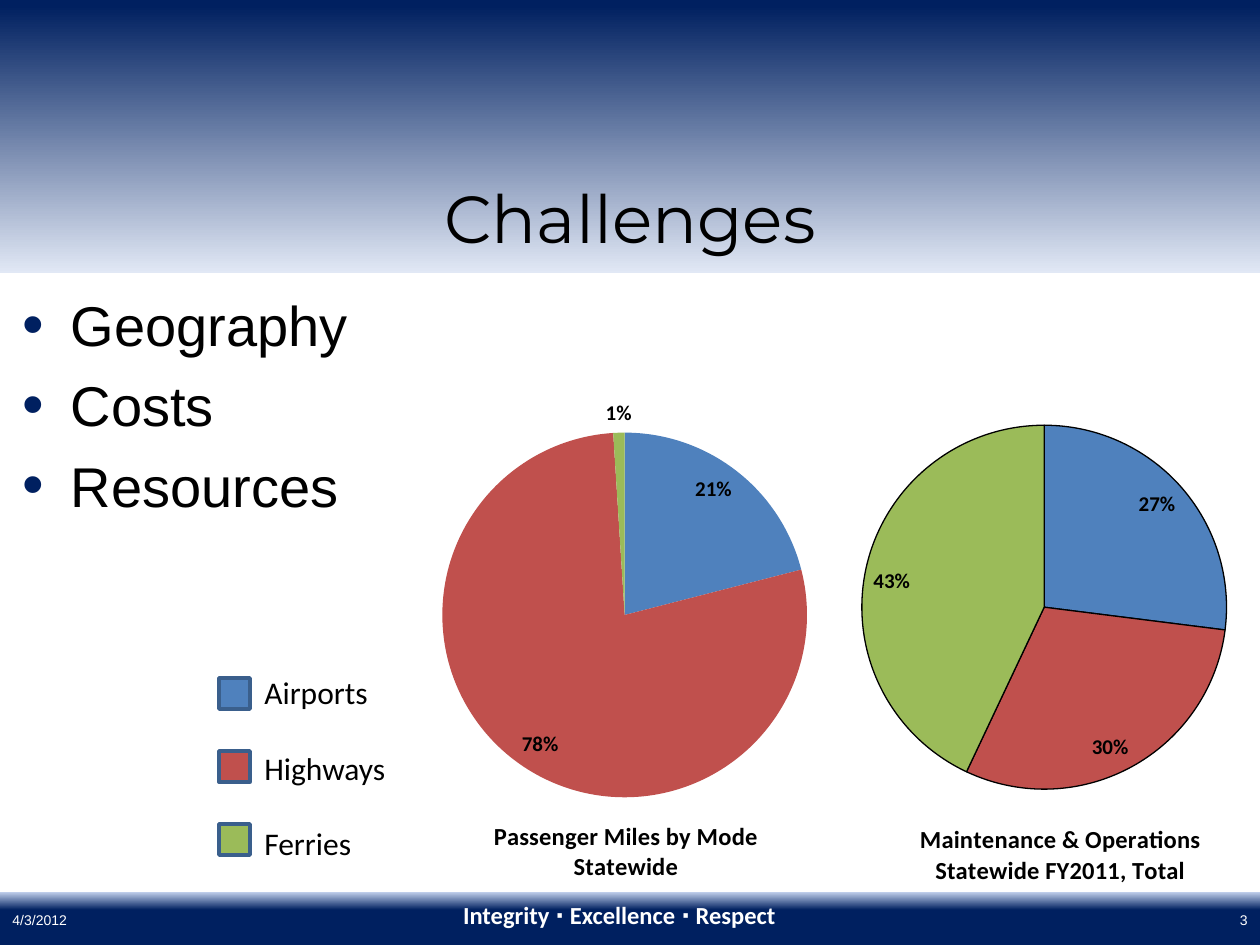
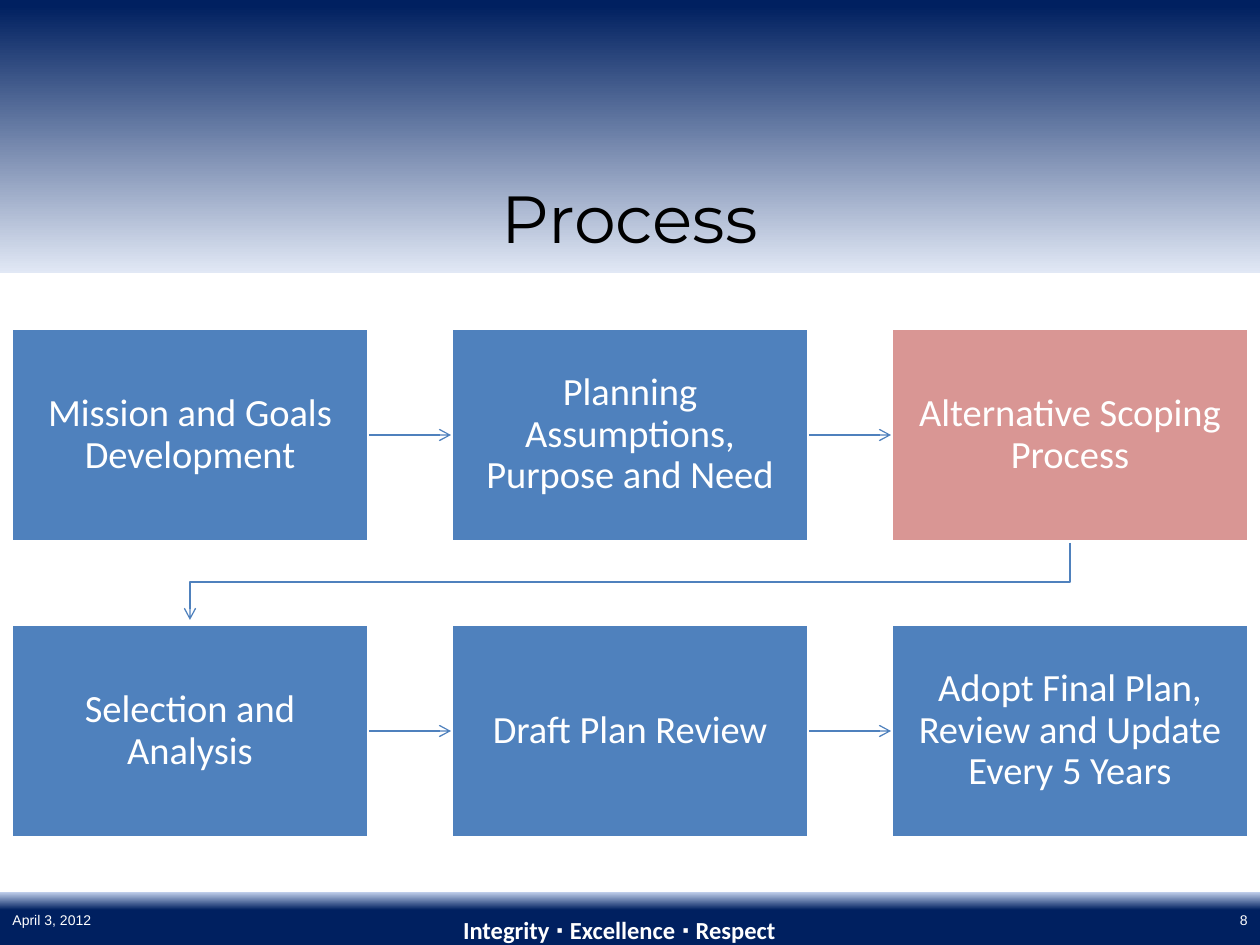
import pptx
import pptx.chart.data
import pptx.dml.color
import pptx.enum.chart
import pptx.enum.shapes
import pptx.enum.text
import pptx.oxml.ns
import pptx.util
from lxml import etree

RGBColor = pptx.dml.color.RGBColor
NAVY = RGBColor(0x00, 0x20, 0x60)
PALE_BLUE = RGBColor(0xE1, 0xE8, 0xF5)
SOFT_BLUE = RGBColor(0xC2, 0xD1, 0xED)
BLUE = RGBColor(0x4F, 0x81, 0xBD)
RED = RGBColor(0xC0, 0x50, 0x4D)
GREEN = RGBColor(0x9B, 0xBB, 0x59)
ROSE = RGBColor(0xD9, 0x96, 0x94)
SWATCH_EDGE = RGBColor(0x3A, 0x5F, 0x8C)
BLACK = RGBColor(0, 0, 0)
WHITE = RGBColor(0xFF, 0xFF, 0xFF)

EMU_PER_PX = 914400 / 126
SLIDE_W, SLIDE_H = 1260, 945
MODES = [("Airports", BLUE), ("Highways", RED), ("Ferries", GREEN)]
STEPS = [
    "Mission and Goals Development",
    "Planning Assumptions, Purpose and Need",
    "Alternative Scoping Process",
    "Selection and Analysis",
    "Draft Plan Review",
    "Adopt Final Plan, Review and Update Every 5 Years",
]
CURRENT_STEP = 2

ALIGN = pptx.enum.text.PP_ALIGN
MIDDLE = pptx.enum.text.MSO_ANCHOR.MIDDLE
LABEL_AT = pptx.enum.chart.XL_LABEL_POSITION
RECTANGLE = pptx.enum.shapes.MSO_SHAPE.RECTANGLE
qn = pptx.oxml.ns.qn


def px(length):
    return pptx.util.Emu(round(length * EMU_PER_PX))


def box(left, top, width, height):
    return px(left), px(top), px(width), px(height)


def add_bullet(properties, color):
    bullet_color = etree.SubElement(properties, qn("a:buClr"))
    etree.SubElement(bullet_color, qn("a:srgbClr"), val=str(color))
    etree.SubElement(properties, qn("a:buSzPct"), val="110000")
    etree.SubElement(properties, qn("a:buFont"), typeface="Arial")
    etree.SubElement(properties, qn("a:buChar"), char="•")


def put_text(frame, lines, font="Calibri", size=18, color=BLACK, bold=False,
             align=ALIGN.LEFT, anchor=None, gap=0, spacing=None, inset=None,
             margin=0, hanging=0, bullet=None):
    frame.word_wrap = True
    if anchor is not None:
        frame.vertical_anchor = anchor
    if inset is not None:
        frame.margin_left = frame.margin_right = px(inset)
        frame.margin_top = frame.margin_bottom = px(inset)
    for index, line in enumerate(lines):
        paragraph = frame.add_paragraph() if index else frame.paragraphs[0]
        if margin:
            properties = paragraph._p.get_or_add_pPr()
            properties.set("marL", str(px(margin)))
            properties.set("indent", str(px(-hanging)))
            if bullet is not None:
                add_bullet(properties, bullet)
        paragraph.alignment = align
        paragraph.space_before = pptx.util.Pt(gap if index else 0)
        if spacing:
            paragraph.line_spacing = spacing
        run = paragraph.add_run()
        run.text = line
        run.font.name = font
        run.font.size = pptx.util.Pt(size)
        run.font.bold = bold
        run.font.color.rgb = color


def add_label(slide, place, lines, **style):
    label = slide.shapes.add_textbox(*box(*place))
    put_text(label.text_frame, lines, **style)


def set_line(line, color, width):
    line.color.rgb = color
    line.width = pptx.util.Pt(width)


def add_rectangle(slide, place, fill, edge=None, edge_width=2):
    rectangle = slide.shapes.add_shape(RECTANGLE, *box(*place))
    rectangle.shadow.inherit = False
    rectangle.fill.solid()
    rectangle.fill.fore_color.rgb = fill
    if edge is None:
        rectangle.line.fill.background()
    else:
        set_line(rectangle.line, edge, edge_width)
    return rectangle


def add_master_band(prs, slide, place, stops):
    band = add_rectangle(slide, place, NAVY)
    band.fill.gradient()
    band.fill.gradient_angle = 270
    for stop, (position, color) in zip(band.fill.gradient_stops, stops):
        stop.position = position
        stop.color.rgb = color
    master_tree = prs.slide_master.placeholders[0].element.getparent()
    master_tree.insert(2, band.element)


def place_placeholder(placeholder, place):
    (placeholder.left, placeholder.top,
     placeholder.width, placeholder.height) = box(*place)
    return placeholder.text_frame


def add_title(slide, title):
    frame = place_placeholder(slide.shapes.title, (0, 160, SLIDE_W, 113))
    put_text(frame, [title], font="Montserrat", size=38,
             align=ALIGN.CENTER, anchor=MIDDLE)


def add_footer(slide, date, number, motto_top):
    small = dict(font="Arial", size=8, color=WHITE, anchor=MIDDLE)
    add_label(slide, (0, 895, 294, 50), [date], **small)
    add_label(slide, (966, 895, 294, 50), [number], align=ALIGN.RIGHT, **small)
    add_label(slide, (420, motto_top, 399, 32),
              ["Integrity ∙ Excellence ∙ Respect"], size=14, color=WHITE,
              bold=True, align=ALIGN.CENTER, anchor=MIDDLE)


def set_layout(parent, index, **values):
    for old in parent.findall(qn("c:layout")):
        parent.remove(old)
    layout = etree.Element(qn("c:layout"))
    manual = etree.SubElement(layout, qn("c:manualLayout"))
    for tag, value in values.items():
        etree.SubElement(manual, qn("c:" + tag), val=str(value))
    parent.insert(index, layout)


def style_labels(labels, position):
    labels.font.name = "Calibri"
    labels.font.size = pptx.util.Pt(12)
    labels.font.bold = True
    labels.font.color.rgb = BLACK
    labels.position = position


def add_pie(slide, place, title_lines, shares, plot_area, title_at,
            outline=None, outside=()):
    data = pptx.chart.data.CategoryChartData()
    data.categories = ["1", "2", "3"]
    data.add_series("Series 1", shares)
    chart = slide.shapes.add_chart(
        pptx.enum.chart.XL_CHART_TYPE.PIE, *box(*place), data).chart
    chart.has_legend = False
    chart.font.name = "Calibri"
    chart.font.size = pptx.util.Pt(10)
    chart.font.color.rgb = BLACK
    chart.has_title = True
    put_text(chart.chart_title.text_frame, title_lines, size=14, bold=True,
             align=ALIGN.CENTER)
    set_layout(chart.element.find(".//" + qn("c:title")), 1,
               xMode="edge", yMode="edge", x=title_at[0], y=title_at[1])
    x, y, w, h = plot_area
    set_layout(chart.element.find(".//" + qn("c:plotArea")), 0,
               layoutTarget="inner", xMode="edge", yMode="edge",
               x=x, y=y, w=w, h=h)

    pie = chart.plots[0]
    pie.vary_by_categories = True
    series = pie.series[0]
    labels = series.data_labels
    labels.show_value = False
    labels.show_percentage = True
    style_labels(labels, LABEL_AT.INSIDE_END)
    for index, (mode, color) in enumerate(MODES):
        wedge = series.points[index]
        wedge.format.fill.solid()
        wedge.format.fill.fore_color.rgb = color
        if outline is None:
            wedge.format.line.fill.background()
        else:
            set_line(wedge.format.line, outline, 0.75)
    for index in outside:
        style_labels(series.points[index].data_label, LABEL_AT.OUTSIDE_END)
    for point_label in chart.element.iter(qn("c:dLbl")):
        point_label.find(qn("c:showVal")).set("val", "0")
        point_label.find(qn("c:showPercent")).set("val", "1")


def add_mode_legend(slide):
    add_label(slide, (126, 667, 388, 204), [mode for mode, color in MODES],
              gap=21.5, margin=126)
    for index, (mode, color) in enumerate(MODES):
        add_rectangle(slide, (219, 678 + 73 * index, 31, 31), color, SWATCH_EDGE)


def add_arrowhead(shape):
    line = shape.element.spPr.find(qn("a:ln"))
    etree.SubElement(line, qn("a:tailEnd"), type="arrow")


def connect_steps(slide, start, end):
    arrow = slide.shapes.add_connector(
        pptx.enum.shapes.MSO_CONNECTOR.STRAIGHT, 0, 0, 0, 0)
    arrow.begin_connect(start, 3)
    arrow.end_connect(end, 1)
    set_line(arrow.line, BLUE, 0.75)
    add_arrowhead(arrow)
    etree.SubElement(arrow.element.spPr, qn("a:effectLst"))


def add_row_return(slide, points):
    builder = slide.shapes.build_freeform(*points[0], scale=EMU_PER_PX)
    builder.add_line_segments(points[1:], close=False)
    route = builder.convert_to_shape()
    route.shadow.inherit = False
    route.fill.background()
    set_line(route.line, BLUE, 0.75)
    add_arrowhead(route)


def add_step(slide, index, step):
    row, column = divmod(index, 3)
    place = (11 + 440 * column, 328 + 296 * row, 358, 214)
    fill = ROSE if index == CURRENT_STEP else BLUE
    rectangle = add_rectangle(slide, place, fill, WHITE)
    put_text(rectangle.text_frame, [step], size=22, color=WHITE, spacing=0.9,
             align=ALIGN.CENTER, anchor=MIDDLE, inset=21)
    return rectangle


def build_challenges(slide):
    add_title(slide, "Challenges")
    add_footer(slide, "4/3/2012", "3", 899)
    body = place_placeholder(slide.placeholders[1], (10, 284, 1239, 608))
    put_text(body, ["Geography", "Costs", "Resources"], font="Arial", size=32,
             gap=7.5, margin=48, hanging=48, bullet=NAVY)
    add_pie(slide, (21, 325, 998, 598),
            ["Passenger Miles by Mode", "Statewide"], (21, 78, 1),
            (0.42, 0.18, 0.37, 0.61), (0.47, 0.82), outside=[2])
    add_pie(slide, (683, 294, 777, 598),
            ["Maintenance & Operations", "Statewide FY2011, Total"],
            (27, 30, 43), (0.23, 0.22, 0.47, 0.61), (0.3, 0.88), outline=BLACK)
    add_mode_legend(slide)


def build_process(slide):
    add_title(slide, "Process")
    add_footer(slide, "April 3, 2012", "8", 914)
    steps = [add_step(slide, index, step) for index, step in enumerate(STEPS)]
    for row in (steps[:3], steps[3:]):
        for start, end in zip(row, row[1:]):
            connect_steps(slide, start, end)
    add_row_return(slide, [(1070, 543), (1070, 582), (190, 582), (190, 620)])


def main():
    prs = pptx.Presentation()
    prs.slide_width, prs.slide_height = px(SLIDE_W), px(SLIDE_H)
    challenges = prs.slides.add_slide(prs.slide_layouts[1])
    process = prs.slides.add_slide(prs.slide_layouts[5])
    add_master_band(prs, challenges, (0, 0, SLIDE_W, 273),
                    [(0.02, NAVY), (1, PALE_BLUE)])
    add_master_band(prs, challenges, (0, 892, SLIDE_W, 53),
                    [(0, SOFT_BLUE), (0.34, NAVY)])
    build_challenges(challenges)
    build_process(process)
    prs.save("out.pptx")


if __name__ == "__main__":
    main()
